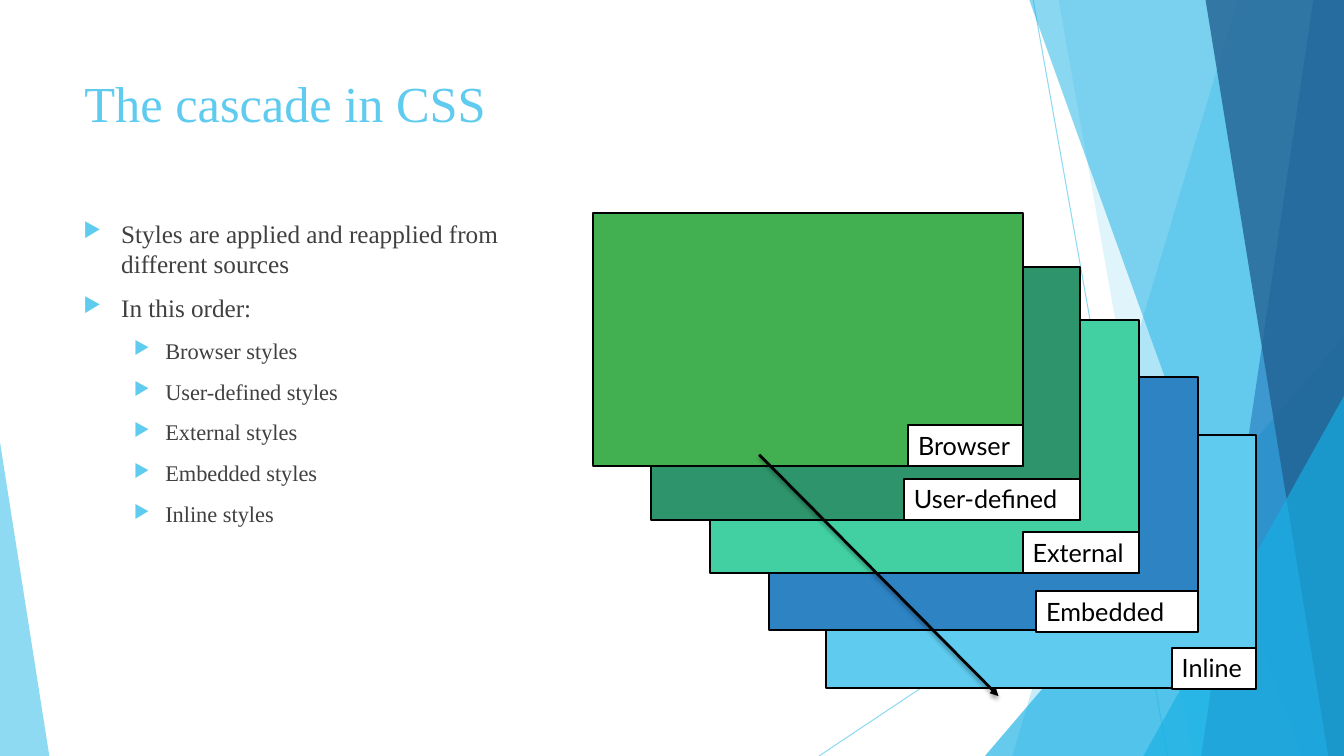
from lxml import etree
from pptx import Presentation
from pptx import util as u
from pptx.dml import color
from pptx.enum import shapes, text
from pptx.oxml import ns

PX = 9525
WIDTH, HEIGHT = 1280, 720
COLORS = {
    "sky": "5FCBEF", "cyan": "17B0E4", "blue": "2E83C3", "navy": "226292",
    "mint": "42D0A2", "pine": "2E946B", "green": "42B051",
    "black": "000000", "white": "FFFFFF", "gray": "404040",
}
SERIF, SANS = "Times New Roman", "Lato"

TITLE = "The cascade in CSS"
BULLETS = [
    (0, "Styles are applied and reapplied from different sources"),
    (0, "In this order:"),
    (1, "Browser styles"),
    (1, "User-defined styles"),
    (1, "External styles"),
    (1, "Embedded styles"),
    (1, "Inline styles"),
]
LEVELS = [{"size": 18, "margin": 36, "hang": 36}, {"size": 16, "margin": 78, "hang": 30}]

HAIRLINES = [(984, 0, 1112, 720), (1280, 387, 780, 720)]
BACKDROP = [
    ("facet", (1179, 964), "sky", 36),
    ("facet", (1008, 1136), "sky", 20),
    ("triangle", (938, 320, 342, 400, 1), "cyan", 66),
    ("facet", (980, 1239), "cyan", 50),
    ("facet", (1251, 1144), "blue", 70),
    ("facet", (1148, 1265), "navy", 80),
    ("triangle", (1089, 377, 191, 343, 1), "cyan", 66),
    ("triangle", (0, 421, 47, 299, 0), "sky", 70),
]

CARD_LEFT, CARD_STEP, CARD_WIDTH, CARD_HEIGHT = 565, 55.5, 409, 241
LABEL_HEIGHT = 39
CARDS = [
    ("Browser", "green", 203, 405, 109),
    ("User-defined", "pine", 254, 456, 168),
    ("External", "mint", 305, 507, 111),
    ("Embedded", "blue", 359, 563, 154),
    ("Inline", "sky", 414, 617, 80),
]
ARROW = (723, 433, 951, 663)


def px(*lengths):
    return [u.Emu(round(length * PX)) for length in lengths]


def rgb(name):
    return color.RGBColor.from_string(COLORS[name])


def add_xml(parent, tag, **attributes):
    return etree.SubElement(parent, ns.qn(tag), attributes)


def set_alpha(fill, percent):
    clr = fill._xPr.find(ns.qn("a:solidFill"))[0]
    add_xml(clr, "a:alpha", val=str(percent * 1000))


def paint(shape, fill, line=None):
    shape.shadow.inherit = False
    shape.fill.solid()
    shape.fill.fore_color.rgb = rgb(fill)
    if line:
        shape.line.color.rgb = rgb(line)
        shape.line.width = u.Pt(1.5)
    else:
        shape.line.fill.background()


def set_font(para, face, size, name):
    para.font.name = face
    para.font.size = u.Pt(size)
    para.font.color.rgb = rgb(name)


def add_line(page, ends, name, points):
    line = page.shapes.add_connector(shapes.MSO_CONNECTOR.STRAIGHT, *px(*ends))
    line.line.color.rgb = rgb(name)
    line.line.width = u.Pt(points)
    return line, add_xml(line._element.spPr, "a:effectLst")


def add_rectangle(page, frame, fill):
    box = page.shapes.add_shape(shapes.MSO_SHAPE.RECTANGLE, *px(*frame))
    paint(box, fill, "black")
    return box


def add_backdrop(page):
    for ends in HAIRLINES:
        line, _ = add_line(page, ends, "sky", 0.75)
        set_alpha(line.line.fill, 70)
    for kind, geometry, name, alpha in BACKDROP:
        if kind == "facet":
            top, bottom = geometry
            builder = page.shapes.build_freeform(top, -1, scale=PX)
            builder.add_line_segments([(WIDTH, -1), (WIDTH, HEIGHT), (bottom, HEIGHT)])
            shape = builder.convert_to_shape()
        else:
            *frame, apex = geometry
            shape = page.shapes.add_shape(shapes.MSO_SHAPE.ISOSCELES_TRIANGLE, *px(*frame))
            shape.adjustments[0] = apex
        paint(shape, name)
        set_alpha(shape.fill, alpha)


def add_texts(page):
    title = page.shapes.add_textbox(*px(71, 64, 902, 138)).text_frame
    title.word_wrap = True
    title.text = TITLE
    set_font(title.paragraphs[0], SERIF, 36, "sky")

    body = page.shapes.add_textbox(*px(70, 203, 462, 348)).text_frame
    body.word_wrap = True
    for index, (depth, words) in enumerate(BULLETS):
        para = body.add_paragraph() if index else body.paragraphs[0]
        para.text = words
        para.level = depth
        level = LEVELS[depth]
        props = para._p.get_or_add_pPr()
        props.set("marL", str(level["margin"] * PX))
        props.set("indent", str(-level["hang"] * PX))
        add_xml(add_xml(props, "a:buClr"), "a:srgbClr", val=COLORS["sky"])
        add_xml(props, "a:buSzPct", val="80000")
        add_xml(props, "a:buChar", char="▶")
        para.space_before = u.Pt(10)
        set_font(para, SERIF, level["size"], "gray")


def add_cards(page):
    lefts = [round(CARD_LEFT + CARD_STEP * index) for index in range(len(CARDS))]
    for left, (_, fill, top, _, _) in reversed(list(zip(lefts, CARDS))):
        add_rectangle(page, (left, top, CARD_WIDTH, CARD_HEIGHT), fill)
    for left, (words, _, _, top, width) in zip(lefts, CARDS):
        right = left + CARD_WIDTH
        label = add_rectangle(page, (right - width, top, width, LABEL_HEIGHT), "white")
        frame = label.text_frame
        frame.word_wrap = True
        frame.vertical_anchor = text.MSO_ANCHOR.TOP
        frame.text = words
        para = frame.paragraphs[0]
        para.alignment = text.PP_ALIGN.LEFT
        set_font(para, SANS, 18, "black")


def add_arrow(page):
    arrow, effects = add_line(page, ARROW, "black", 2)
    add_xml(arrow.line._get_or_add_ln(), "a:tailEnd", type="triangle")
    shadow = add_xml(effects, "a:outerShdw", blurRad=str(u.Pt(3)), dist=str(u.Pt(2)),
                     dir="5400000", rotWithShape="0")
    tint = add_xml(shadow, "a:srgbClr", val=COLORS["black"])
    add_xml(tint, "a:alpha", val="35000")


def main():
    deck = Presentation()
    deck.slide_width, deck.slide_height = px(WIDTH, HEIGHT)
    page = deck.slides.add_slide(deck.slide_layouts[6])
    add_backdrop(page)
    add_texts(page)
    add_cards(page)
    add_arrow(page)
    deck.save("out.pptx")


if __name__ == "__main__":
    main()
